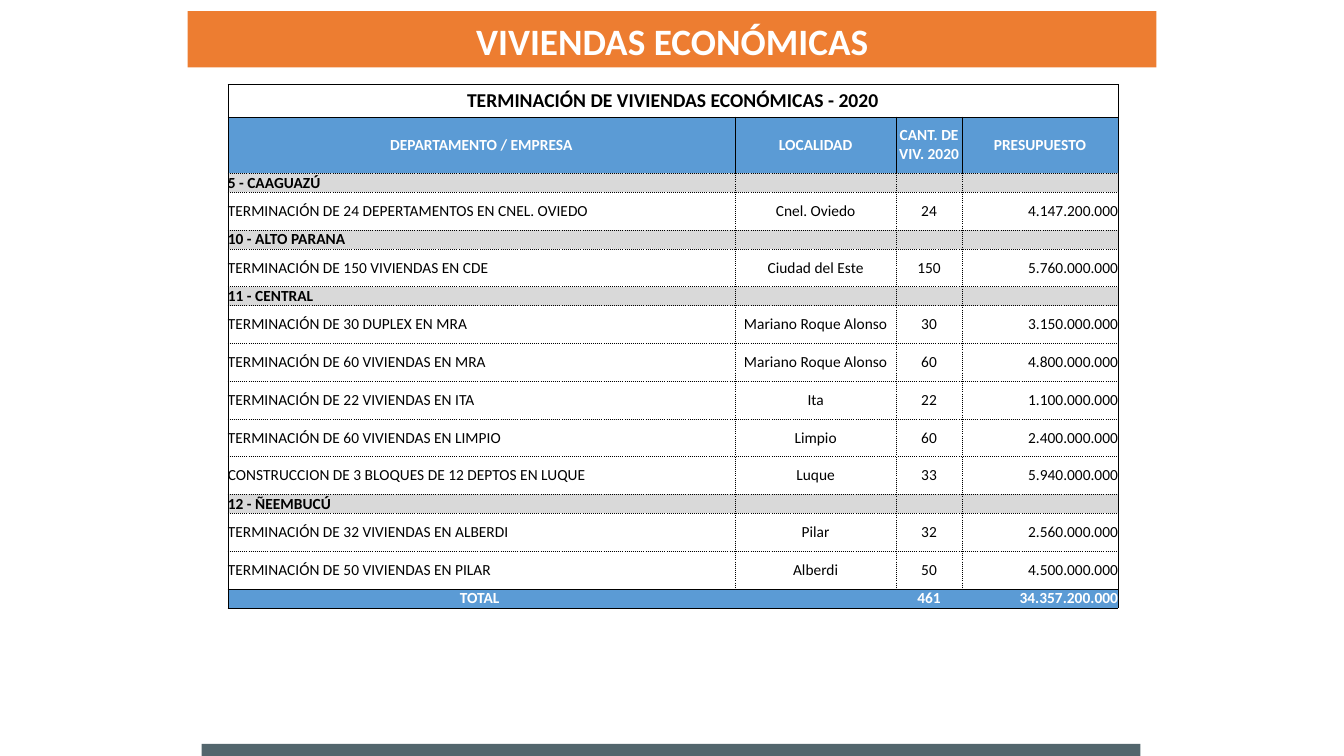
from dataclasses import dataclass

from lxml.etree import SubElement
from pptx import Presentation
from pptx.dml.color import RGBColor
from pptx.enum.shapes import MSO_SHAPE
from pptx.enum.text import MSO_ANCHOR, MSO_AUTO_SIZE, PP_ALIGN
from pptx.oxml.ns import qn
from pptx.util import Inches, Pt

COLORS = {
    "black": "000000",
    "white": "FFFFFF",
    "orange": "ED7D31",
    "blue": "5B9BD5",
    "grey": "D9D9D9",
    "slate": "53666D",
}
FONT = "Calibri"
BODY_SIZE = 11
COLUMN_WIDTHS = (5.03, 1.6, 0.65, 1.55)
LEFT, CENTER, RIGHT = PP_ALIGN.LEFT, PP_ALIGN.CENTER, PP_ALIGN.RIGHT
SOLID, DOTTED, NO_LINE = "solid", "dot", "none"
PROJECT_HEIGHT = 3 / 8
GROUP_HEIGHT = PROJECT_HEIGHT / 2


@dataclass(frozen=True)
class RowStyle:
    height: float
    aligns: tuple
    fill: str | None = None
    color: str = "black"
    bold: bool = True
    size: float = BODY_SIZE
    inner: str = DOTTED
    top: str = DOTTED
    bottom: str = DOTTED


@dataclass(frozen=True)
class Row:
    style: RowStyle
    texts: tuple


BODY_ALIGNS = (LEFT, CENTER, CENTER, RIGHT)
TITLE = RowStyle(0.32, (CENTER,) * 4, size=14, inner=SOLID, top=SOLID, bottom=SOLID)
HEADER = RowStyle(0.56, (CENTER,) * 4, "blue", "white", inner=SOLID, top=SOLID)
GROUP = RowStyle(GROUP_HEIGHT, BODY_ALIGNS, "grey")
PROJECT = RowStyle(PROJECT_HEIGHT, BODY_ALIGNS, bold=False)
LAST_PROJECT = RowStyle(PROJECT_HEIGHT, BODY_ALIGNS, bold=False, bottom=SOLID)
TOTAL = RowStyle(GROUP_HEIGHT, (CENTER, CENTER, CENTER, RIGHT), "blue", "white",
                 inner=NO_LINE, top=SOLID, bottom=SOLID)

ROWS = (
    Row(TITLE, ("TERMINACIÓN DE VIVIENDAS ECONÓMICAS - 2020", "", "", "")),
    Row(HEADER, ("DEPARTAMENTO / EMPRESA", "LOCALIDAD", "CANT. DE VIV. 2020", "PRESUPUESTO")),
    Row(GROUP, ("5 - CAAGUAZÚ", "", "", "")),
    Row(PROJECT, ("TERMINACIÓN DE 24 DEPERTAMENTOS EN CNEL. OVIEDO", "Cnel. Oviedo", "24", "4.147.200.000")),
    Row(GROUP, ("10 - ALTO PARANA", "", "", "")),
    Row(PROJECT, ("TERMINACIÓN DE 150 VIVIENDAS EN CDE", "Ciudad del Este", "150", "5.760.000.000")),
    Row(GROUP, ("11 - CENTRAL", "", "", "")),
    Row(PROJECT, ("TERMINACIÓN DE 30 DUPLEX EN MRA", "Mariano Roque Alonso", "30", "3.150.000.000")),
    Row(PROJECT, ("TERMINACIÓN DE 60 VIVIENDAS EN MRA", "Mariano Roque Alonso", "60", "4.800.000.000")),
    Row(PROJECT, ("TERMINACIÓN DE 22 VIVIENDAS EN ITA", "Ita", "22", "1.100.000.000")),
    Row(PROJECT, ("TERMINACIÓN DE 60 VIVIENDAS EN LIMPIO", "Limpio", "60", "2.400.000.000")),
    Row(PROJECT, ("CONSTRUCCION DE 3 BLOQUES DE 12 DEPTOS EN LUQUE", "Luque", "33", "5.940.000.000")),
    Row(GROUP, ("12 - ÑEEMBUCÚ", "", "", "")),
    Row(PROJECT, ("TERMINACIÓN DE 32 VIVIENDAS EN ALBERDI", "Pilar", "32", "2.560.000.000")),
    Row(LAST_PROJECT, ("TERMINACIÓN DE 50 VIVIENDAS EN PILAR", "Alberdi", "50", "4.500.000.000")),
    Row(TOTAL, ("TOTAL ", "", "461", "34.357.200.000")),
)


def rgb(color: str) -> RGBColor:
    return RGBColor.from_string(COLORS[color])


def write(frame, text: str, *, size: float, color: str, bold: bool, align: PP_ALIGN) -> None:
    """Fill a text frame; an empty one still gets the size that sets its line height."""
    paragraph = frame.paragraphs[0]
    paragraph.alignment = align
    if not text:
        SubElement(paragraph._p, qn("a:endParaRPr"), sz=str(size * 100))
        return
    run = paragraph.add_run()
    run.text = text
    run.font.name = FONT
    run.font.size = Pt(size)
    run.font.bold = bold
    run.font.color.rgb = rgb(color)


def add_bar(slide, left: float, top: float, width: float, height: float, color: str) -> None:
    bar = slide.shapes.add_shape(
        MSO_SHAPE.RECTANGLE, Inches(left), Inches(top), Inches(width), Inches(height))
    bar.shadow.inherit = False
    bar.fill.solid()
    bar.fill.fore_color.rgb = rgb(color)
    bar.line.fill.background()


def add_heading(slide) -> None:
    heading = slide.shapes.add_textbox(Inches(1.67), Inches(0.13), Inches(10), Inches(0.55))
    frame = heading.text_frame
    frame.word_wrap = True
    frame.auto_size = MSO_AUTO_SIZE.SHAPE_TO_FIT_TEXT
    frame.vertical_anchor = MSO_ANCHOR.MIDDLE
    frame.margin_left = frame.margin_right = Inches(0.05)
    frame.margin_top = frame.margin_bottom = Inches(0.05)
    write(frame, "VIVIENDAS ECONÓMICAS", size=26.6, color="white", bold=True, align=CENTER)


def set_borders(cell, left: str, right: str, top: str, bottom: str) -> None:
    properties = cell._tc.get_or_add_tcPr()
    for side, dash in zip("LRTB", (left, right, top, bottom)):
        border = SubElement(properties, qn(f"a:ln{side}"), w=str(Pt(0.5)))
        if dash == NO_LINE:
            SubElement(border, qn("a:noFill"))
            continue
        fill = SubElement(border, qn("a:solidFill"))
        SubElement(fill, qn("a:srgbClr"), val=COLORS["black"])
        SubElement(border, qn("a:prstDash"), val=dash)


def format_cell(cell, style: RowStyle, column: int) -> None:
    cell.margin_left = cell.margin_right = cell.margin_top = cell.margin_bottom = 0
    cell.vertical_anchor = MSO_ANCHOR.MIDDLE
    set_borders(
        cell,
        left=SOLID if column == 0 else style.inner,
        right=SOLID if column == len(COLUMN_WIDTHS) - 1 else style.inner,
        top=style.top,
        bottom=style.bottom,
    )
    if style.fill:
        cell.fill.solid()
        cell.fill.fore_color.rgb = rgb(style.fill)
    else:
        cell.fill.background()


def add_budget_table(slide) -> None:
    height = sum(row.style.height for row in ROWS)
    table = slide.shapes.add_table(
        len(ROWS), len(COLUMN_WIDTHS), Inches(2.26), Inches(0.84),
        Inches(sum(COLUMN_WIDTHS)), Inches(height)).table
    table.first_row = table.horz_banding = False
    for column, width in zip(table.columns, COLUMN_WIDTHS):
        column.width = Inches(width)
    for row_index, row in enumerate(ROWS):
        style = row.style
        table.rows[row_index].height = Inches(style.height)
        for column_index, text in enumerate(row.texts):
            cell = table.cell(row_index, column_index)
            format_cell(cell, style, column_index)
            write(cell.text_frame, text, size=style.size, color=style.color,
                  bold=style.bold, align=style.aligns[column_index])
    table.cell(0, 0).merge(table.cell(0, len(COLUMN_WIDTHS) - 1))


def main() -> None:
    presentation = Presentation()
    presentation.slide_width = Inches(13.33)
    presentation.slide_height = Inches(7.5)
    slide = presentation.slides.add_slide(presentation.slide_layouts[6])
    add_bar(slide, 2, 7.38, 9.31, 0.15, "slate")
    add_bar(slide, 1.86, 0.11, 9.61, 0.56, "orange")
    add_heading(slide)
    add_budget_table(slide)
    presentation.save("out.pptx")


if __name__ == "__main__":
    main()
